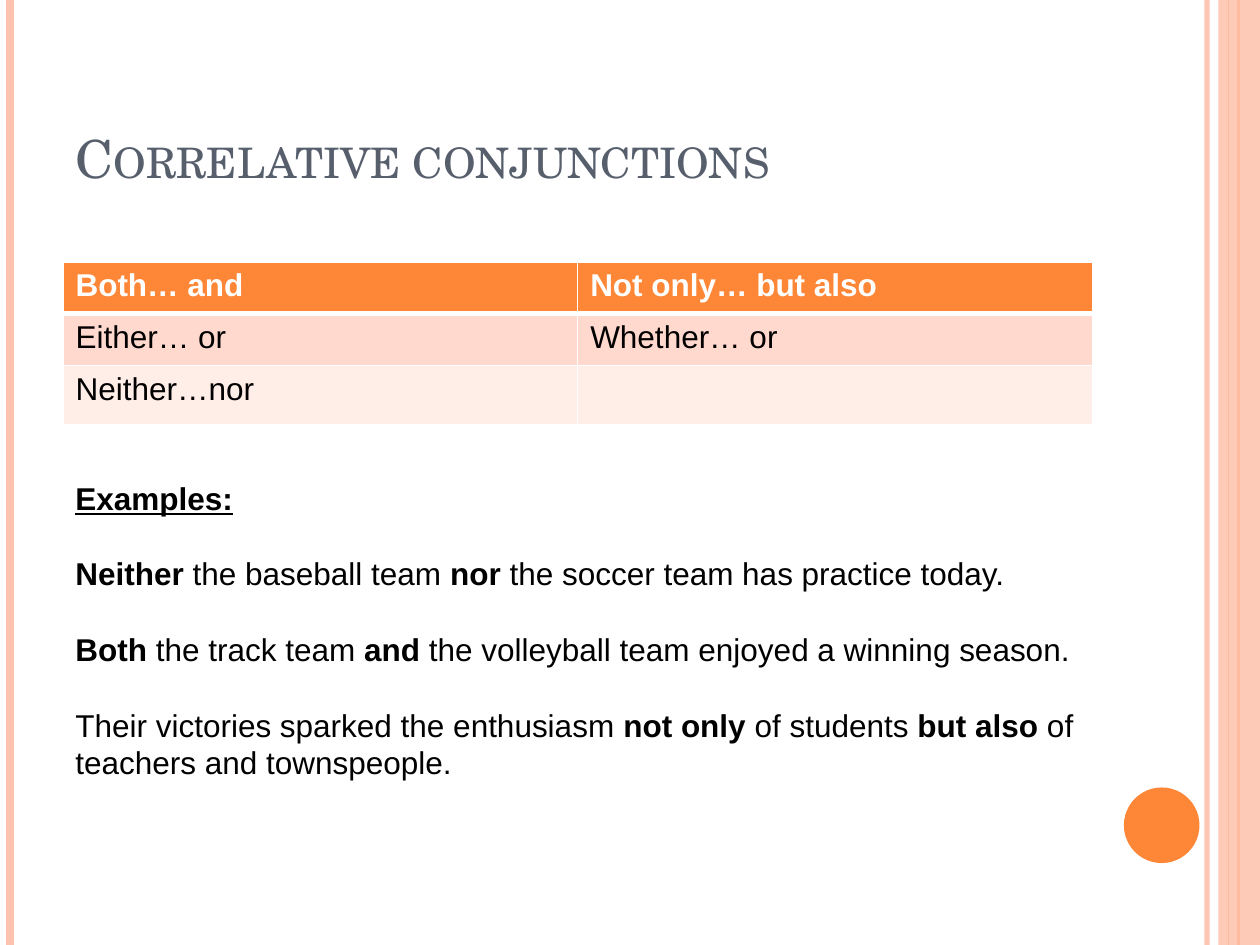
from lxml.etree import SubElement
from pptx import Presentation
from pptx.dml.color import RGBColor
from pptx.enum.shapes import MSO_CONNECTOR as LINE, MSO_SHAPE as SHAPE
from pptx.enum.text import MSO_ANCHOR as ANCHOR, PP_ALIGN as ALIGN
from pptx.oxml.ns import qn
from pptx.util import Inches, Pt

ORANGE, PEACH, WHITE, BLACK = "FE8637", "FEC3AE", "FFFFFF", "000000"
TITLE = "Correlative conjunctions"
BARS = [
    (9.58, PEACH, 3, 93),
    (0.08, PEACH, 4.5, 100),
    (9.83, ORANGE, 1.5, 100),
    (9.75, ORANGE, 0.75, 100),
]
PANELS = [
    (SHAPE.RECTANGLE, (9.67, 0, 0.33, 7.5), PEACH, 87),
    (SHAPE.OVAL, (8.92, 6.25, 0.6, 0.6), ORANGE, 100),
]
ROWS = [
    (("Both… and", "Not only… but also"), ORANGE, WHITE, 0.41),
    (("Either… or", "Whether… or"), "FFD9CE", BLACK, 0.41),
    (("Neither…nor", ""), "FFEDE8", BLACK, 0.47),
]
HEAD = "Examples:"
LINES = [
    [("Neither", True), (" the baseball team ", False), ("nor", True),
     (" the soccer team has practice today.", False)],
    [("Both", True), (" the track team ", False), ("and", True),
     (" the volleyball team enjoyed a winning season.", False)],
    [("Their victories sparked the enthusiasm ", False), ("not only ", True),
     ("of students ", False), ("but also ", True),
     ("of teachers and townspeople.", False)],
]


def paint(fill, color, alpha=100):
    fill.solid()
    fill.fore_color.rgb = RGBColor.from_string(color)
    if alpha < 100:
        tint = fill._xPr.find(".//" + qn("a:srgbClr"))
        SubElement(tint, qn("a:alpha"), val=str(alpha * 1000))


def style(font, color, size=18, name="Arial", bold=None):
    font.name, font.size, font.bold = name, Pt(size), bold
    paint(font.fill, color)


def place(shape, box):
    shape.left, shape.top, shape.width, shape.height = map(Inches, box)


def edge(cell, side, width):
    line = SubElement(cell._tc.get_or_add_tcPr(), qn("a:" + side), w=str(Pt(width)))
    fill = SubElement(line, qn("a:solidFill"))
    SubElement(fill, qn("a:srgbClr"), val=WHITE)


def add_decor(slide):
    for x, color, width, alpha in BARS:
        bar = slide.shapes.add_connector(
            LINE.STRAIGHT, Inches(x), 0, Inches(x), Inches(7.5))
        bar.line.width = Pt(width)
        paint(bar.line.fill, color, alpha)
        SubElement(bar._element.spPr, qn("a:effectLst"))
    for kind, box, color, alpha in PANELS:
        panel = slide.shapes.add_shape(kind, *map(Inches, box))
        panel.shadow.inherit = False
        panel.line.fill.background()
        paint(panel.fill, color, alpha)


def add_title(slide):
    title = slide.shapes.title
    place(title, (0.5, 0.3, 8.17, 1.25))
    title.text_frame.vertical_anchor = ANCHOR.BOTTOM
    para = title.text_frame.paragraphs[0]
    para.alignment = ALIGN.LEFT
    run = para.add_run()
    run.text = TITLE
    style(para.font, "575F6D", 30, "TeX Gyre Schola")
    run._r.get_or_add_rPr().set("cap", "small")


def add_pairs(slide):
    high = sum(row[3] for row in ROWS)
    table = slide.shapes.add_table(
        len(ROWS), 2, *map(Inches, (0.5, 2.08, 8.17, high))).table
    for r, (words, shade, ink, tall) in enumerate(ROWS):
        table.rows[r].height = Inches(tall)
        for c, word in enumerate(words):
            cell = table.cell(r, c)
            cell.text = word
            style(cell.text_frame.paragraphs[0].font, ink, bold=r == 0)
            for side in ("lnL", "lnR", "lnT", "lnB"):
                thick = (r, side) in ((0, "lnB"), (1, "lnT"))
                edge(cell, side, 3 if thick else 1)
            paint(cell.fill, shade)


def add_examples(slide):
    frame = slide.shapes.add_textbox(
        *map(Inches, (0.5, 3.75, 8.25, 2.52))).text_frame
    frame.word_wrap = True
    head = frame.paragraphs[0]
    head.text = HEAD
    style(head.font, BLACK, bold=True)
    head.font.underline = True
    head.space_after = Pt(21.6)
    for line in LINES:
        para = frame.add_paragraph()
        style(para.font, BLACK)
        if line is not LINES[-1]:
            para.space_after = Pt(21.6)
        for text, bold in line:
            run = para.add_run()
            run.text, run.font.bold = text, bold


def main():
    deck = Presentation()
    deck.slide_width, deck.slide_height = Inches(10), Inches(7.5)
    slide = deck.slides.add_slide(deck.slide_layouts[5])
    paint(slide.background.fill, WHITE)
    add_decor(slide)
    add_title(slide)
    add_pairs(slide)
    add_examples(slide)
    deck.save("out.pptx")


if __name__ == "__main__":
    main()
